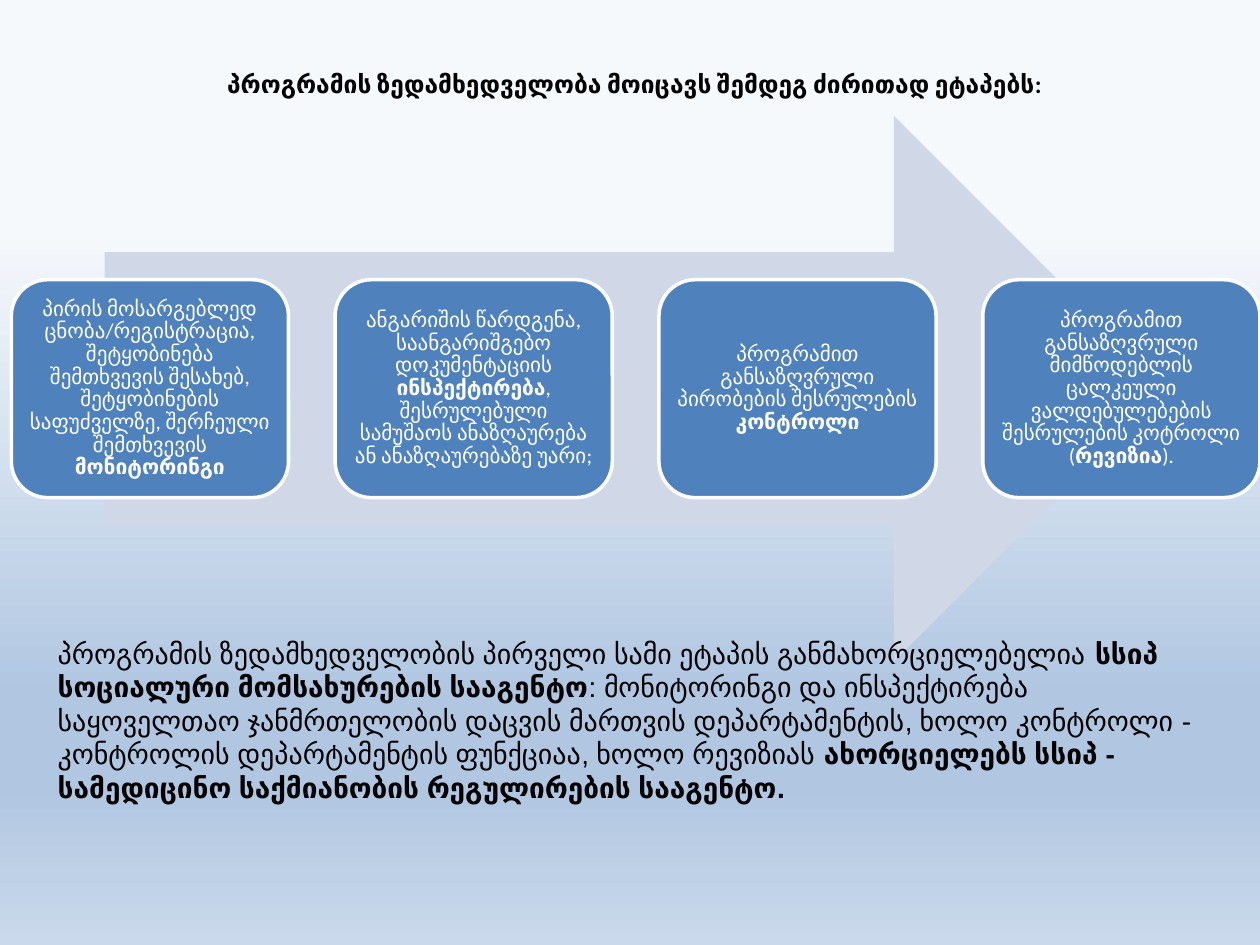
from copy import deepcopy

from pptx import Presentation
from pptx import util as u
from pptx.dml.color import RGBColor
from pptx.enum import shapes, text

BLACK = RGBColor(0x00, 0x00, 0x00)
WHITE = RGBColor(0xFF, 0xFF, 0xFF)
STAGE_BLUE = RGBColor(0x4F, 0x81, 0xBD)
ARROW_GREY = RGBColor(0xD0, 0xD8, 0xE8)
SKY = [
    (0.24, RGBColor(0xF6, 0xF9, 0xFC)),
    (0.74, RGBColor(0xB0, 0xC6, 0xE1)),
    (0.83, RGBColor(0xB0, 0xC6, 0xE1)),
    (1.0, RGBColor(0xCA, 0xD9, 0xEB)),
]

TITLE = [("პროგრამის ზედამხედველობა მოიცავს შემდეგ ძირითად ეტაპებს:", True)]
STAGES = [
    [("პირის მოსარგებლედ ცნობა/რეგისტრაცია, შეტყობინება შემთხვევის შესახებ, "
      "შეტყობინების საფუძველზე, შერჩეული შემთხვევის ", False),
     ("მონიტორინგი", True)],
    [("ანგარიშის წარდგენა, საანგარიშგებო დოკუმენტაციის ", False),
     ("ინსპექტირება", True),
     (", შესრულებული სამუშაოს ანაზღაურება ან ანაზღაურებაზე უარი;", False)],
    [("პროგრამით განსაზღვრული პირობების შესრულების ", False),
     ("კონტროლი", True)],
    [("პროგრამით განსაზღვრული მიმწოდებლის ცალკეული ვალდებულებების "
      "შესრულების კოტროლი (", False),
     ("რევიზია", True),
     (").", False)],
]
AGENCIES = [
    ("პროგრამის ზედამხედველობის პირველი სამი ეტაპის განმახორციელებელია ", False),
    ("სსიპ სოციალური მომსახურების სააგენტო", True),
    (": მონიტორინგი და ინსპექტირება საყოველთაო ჯანმრთელობის დაცვის მართვის "
     "დეპარტამენტის, ხოლო კონტროლი - კონტროლის დეპარტამენტის ფუნქციაა, "
     "ხოლო რევიზიას ", False),
    ("ახორციელებს სსიპ - სამედიცინო საქმიანობის რეგულირების სააგენტო.", True),
]


def set_format(target, values):
    for name, value in values.items():
        setattr(target, name, value)


class SlideBuilder:
    title_font = {"name": "Calibri", "size": u.Pt(14)}
    stage_font = {"name": "Calibri", "size": u.Pt(12)}
    body_font = {"name": "Arial", "size": u.Pt(16)}
    centred = {"alignment": text.PP_ALIGN.CENTER}
    tight = {"alignment": text.PP_ALIGN.CENTER, "line_spacing": 0.9}
    middle = {"vertical_anchor": text.MSO_ANCHOR.MIDDLE}
    stage_frame = {
        "vertical_anchor": text.MSO_ANCHOR.MIDDLE,
        **{f"margin_{side}": u.Inches(0.05)
           for side in ("left", "top", "right", "bottom")},
    }

    def __init__(self, slide):
        self.slide = slide

    def background(self, stops):
        fill = self.slide.background.fill
        fill.gradient()
        fill.gradient_angle = 270
        stop_list = self.slide.element.xpath(".//a:gsLst")[0]
        while len(stop_list) < len(stops):
            stop_list.append(deepcopy(stop_list[0]))
        for stop, (position, colour) in zip(fill.gradient_stops, stops):
            stop.position = position
            stop.color.rgb = colour

    def add_words(self, frame, runs, font, colour, frame_format, paragraph_format):
        set_format(frame, {"word_wrap": True, **frame_format})
        paragraph = frame.paragraphs[0]
        set_format(paragraph, paragraph_format)
        for words, bold in runs:
            run = paragraph.add_run()
            run.text = words
            set_format(run.font, {**font, "bold": bold})
            run.font.color.rgb = colour

    def block(self, preset, box, colour):
        block = self.slide.shapes.add_shape(preset, *map(u.Inches, box))
        block.shadow.inherit = False
        block.fill.solid()
        block.fill.fore_color.rgb = colour
        block.line.fill.background()
        return block

    def arrow(self, box):
        self.block(shapes.MSO_SHAPE.RIGHT_ARROW, box, ARROW_GREY)

    def stage(self, box, runs):
        stage = self.block(shapes.MSO_SHAPE.ROUNDED_RECTANGLE, box, STAGE_BLUE)
        stage.line.color.rgb = WHITE
        stage.line.width = u.Pt(2)
        self.add_words(stage.text_frame, runs, self.stage_font, WHITE,
                       self.stage_frame, self.tight)

    def text_box(self, box, runs, font, frame_format, paragraph_format):
        holder = self.slide.shapes.add_textbox(*map(u.Inches, box))
        self.add_words(holder.text_frame, runs, font, BLACK,
                       frame_format, paragraph_format)


def main():
    deck = Presentation()
    deck.slide_width, deck.slide_height = u.Inches(10), u.Inches(7.5)
    builder = SlideBuilder(deck.slides.add_slide(deck.slide_layouts[6]))

    builder.background(SKY)
    builder.text_box((0.2, 0.33, 9.67, 0.67), TITLE, builder.title_font,
                     builder.middle, builder.centred)
    builder.arrow((0.83, 0.92, 8.43, 4.33))
    stage_left, stage_pitch = 0.09, 2.57
    for index, runs in enumerate(STAGES):
        builder.stage((stage_left + index * stage_pitch, 2.22, 2.2, 1.73), runs)
    builder.text_box((0.36, 5, 9.33, 1.45), AGENCIES, builder.body_font, {}, {})

    deck.save("out.pptx")


if __name__ == "__main__":
    main()
